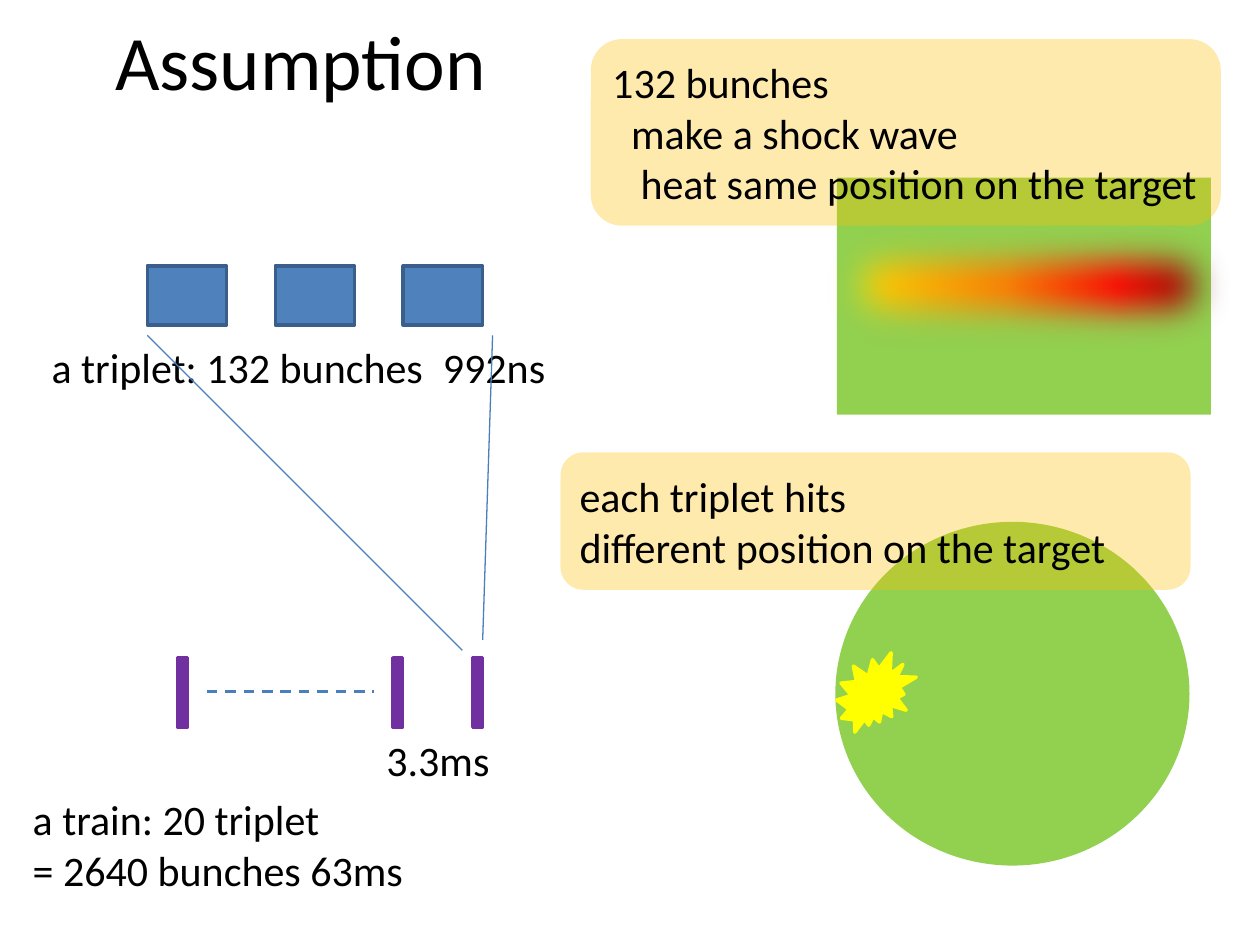
from dataclasses import dataclass
from typing import Optional

from lxml import etree
from pptx import Presentation
from pptx.dml.color import RGBColor
from pptx.enum import dml, shapes, text
from pptx.oxml import ns
from pptx.util import Cm, Pt

SHAPE = shapes.MSO_SHAPE
FONT = "Calibri"
BLUE, BLUE_EDGE, LINE_BLUE = "4F81BD", "3A5F8C", "4B7EBC"
PURPLE, GREEN, YELLOW, AMBER, BLACK = "7030A0", "92D050", "FFFF00", "FFC000", "000000"


@dataclass
class Box:
    left: float
    top: float
    width: float
    height: float

    def lengths(self):
        return Cm(self.left), Cm(self.top), Cm(self.width), Cm(self.height)


@dataclass
class Line:
    words: str
    indent: float = 0
    tab: Optional[float] = None


@dataclass
class Caption:
    box: Box
    lines: list[Line]


def rgb(value: str) -> RGBColor:
    return RGBColor.from_string(value)


def add_element(parent, tag: str, **attributes: str):
    return etree.SubElement(parent, ns.qn(tag), attributes)


def style_run(run, size: float) -> None:
    run.font.name = FONT
    run.font.size = Pt(size)
    run.font.color.rgb = rgb(BLACK)


def write_lines(frame, lines: list[Line]) -> None:
    for index, line in enumerate(lines):
        paragraph = frame.add_paragraph() if index else frame.paragraphs[0]
        properties = paragraph._p.get_or_add_pPr()
        if line.indent:
            properties.set("marL", str(Cm(line.indent)))
        if line.tab:
            stops = add_element(properties, "a:tabLst")
            add_element(stops, "a:tab", pos=str(Cm(line.tab)), algn="l")
        paragraph.alignment = text.PP_ALIGN.LEFT
        style_run_target = paragraph.add_run()
        style_run_target.text = line.words
        style_run(style_run_target, 24)


def draw_shape(parent, kind: SHAPE, box: Box, fill: str, edge: Optional[str] = None):
    shape = parent.add_shape(kind, *box.lengths())
    shape.shadow.inherit = False
    shape.fill.solid()
    shape.fill.fore_color.rgb = rgb(fill)
    if edge:
        shape.line.color.rgb = rgb(edge)
        shape.line.width = Pt(2)
    else:
        shape.line.fill.background()
    return shape


def draw_line(parent, start: tuple[float, float], end: tuple[float, float], width: float):
    line = parent.add_connector(
        shapes.MSO_CONNECTOR.STRAIGHT, *(Cm(value) for value in (*start, *end))
    )
    line.line.color.rgb = rgb(LINE_BLUE)
    line.line.width = Pt(width)
    add_element(line._element.spPr, "a:effectLst")
    return line


def draw_caption(parent, caption: Caption) -> None:
    frame = parent.add_textbox(*caption.box.lengths()).text_frame
    frame.word_wrap = False
    frame.auto_size = text.MSO_AUTO_SIZE.SHAPE_TO_FIT_TEXT
    write_lines(frame, caption.lines)


def draw_callout(parent, caption: Caption) -> None:
    callout = draw_shape(parent, SHAPE.ROUNDED_RECTANGLE, caption.box, AMBER)
    tint = callout._element.spPr.find(ns.qn("a:solidFill")).find(ns.qn("a:srgbClr"))
    add_element(tint, "a:alpha", val="32000")
    callout.text_frame.vertical_anchor = text.MSO_ANCHOR.MIDDLE
    write_lines(callout.text_frame, caption.lines)


def draw_heat(parent, box: Box, stops: list[tuple[int, str]]) -> None:
    heat = draw_shape(parent, SHAPE.RECTANGLE, box, YELLOW)
    heat.fill.gradient()
    heat.fill.gradient_angle = 0
    properties = heat._element.spPr
    stop_list = properties.find(ns.qn("a:gradFill")).find(ns.qn("a:gsLst"))
    for stop in list(stop_list):
        stop_list.remove(stop)
    for percent, color in stops:
        stop = add_element(stop_list, "a:gs", pos=str(percent * 1000))
        add_element(stop, "a:srgbClr", val=color)
    effects = properties.find(ns.qn("a:effectLst"))
    add_element(effects, "a:softEdge", rad=str(Pt(25)))


def main() -> None:
    deck = Presentation()
    deck.slide_width, deck.slide_height = Cm(25.4), Cm(19.05)
    slide = deck.slides.add_slide(deck.slide_layouts[5])
    canvas = slide.shapes

    title = canvas.title
    title.left, title.top, title.width, title.height = Box(0.41, 0, 11.3, 2.41).lengths()
    title.text_frame.vertical_anchor = text.MSO_ANCHOR.MIDDLE
    heading = title.text_frame.paragraphs[0]
    heading.alignment = text.PP_ALIGN.CENTER
    heading_run = heading.add_run()
    heading_run.text = "Assumption"
    style_run(heading_run, 44)

    triplet = canvas.add_group_shape().shapes
    for index in range(3):
        bunch = Box(2.97 + 2.58 * index, 5.36, 1.6, 1.19)
        draw_shape(triplet, SHAPE.RECTANGLE, bunch, BLUE, BLUE_EDGE)
    draw_caption(canvas, Caption(
        Box(0.79, 6.76, 10.54, 1.27), [Line("a triplet: 132 bunches\t992ns", tab=7.89)]
    ))

    train = canvas.add_group_shape().shapes
    for left in (3.58, 7.92, 9.53):
        draw_shape(train, SHAPE.RECTANGLE, Box(left, 13.26, 0.2, 1.4), PURPLE, PURPLE)
    omitted = draw_line(train, (4.17, 13.94), (7.54, 13.94), 1.5)
    omitted.line.dash_style = dml.MSO_LINE.DASH

    draw_shape(canvas, SHAPE.OVAL, Box(16.84, 10.52, 7.14, 6.93), GREEN)
    draw_shape(canvas, SHAPE.RECTANGLE, Box(16.87, 3.58, 7.54, 4.78), GREEN)
    draw_shape(canvas, SHAPE.EXPLOSION2, Box(16.87, 13.16, 1.6, 1.6), YELLOW, YELLOW)
    draw_heat(
        canvas,
        Box(16.28, 4.17, 8.94, 3.18),
        [(0, "FFF200"), (45, "FF7A00"), (70, "FF0300"), (100, "4D0808")],
    )

    draw_caption(canvas, Caption(
        Box(0.41, 15.88, 8.05, 2.31),
        [Line("a train: 20 triplet"), Line("= 2640 bunches 63ms")],
    ))
    draw_line(canvas, (9.32, 13.11), (2.97, 6.76), 0.75)
    draw_line(canvas, (9.73, 12.9), (9.93, 6.76), 0.75)
    draw_caption(canvas, Caption(Box(7.54, 14.68, 2.62, 1.27), [Line("3.3ms")]))

    callouts = [
        Caption(Box(11.91, 0.79, 12.7, 3.76), [
            Line("132 bunches"),
            Line("make a shock wave", indent=0.38),
            Line("heat same position on the target", indent=0.57),
        ]),
        Caption(Box(11.3, 9.12, 12.7, 2.77), [
            Line("each triplet hits"),
            Line("different position on the target"),
        ]),
    ]
    for callout in callouts:
        draw_callout(canvas, callout)

    deck.save("out.pptx")


if __name__ == "__main__":
    main()
